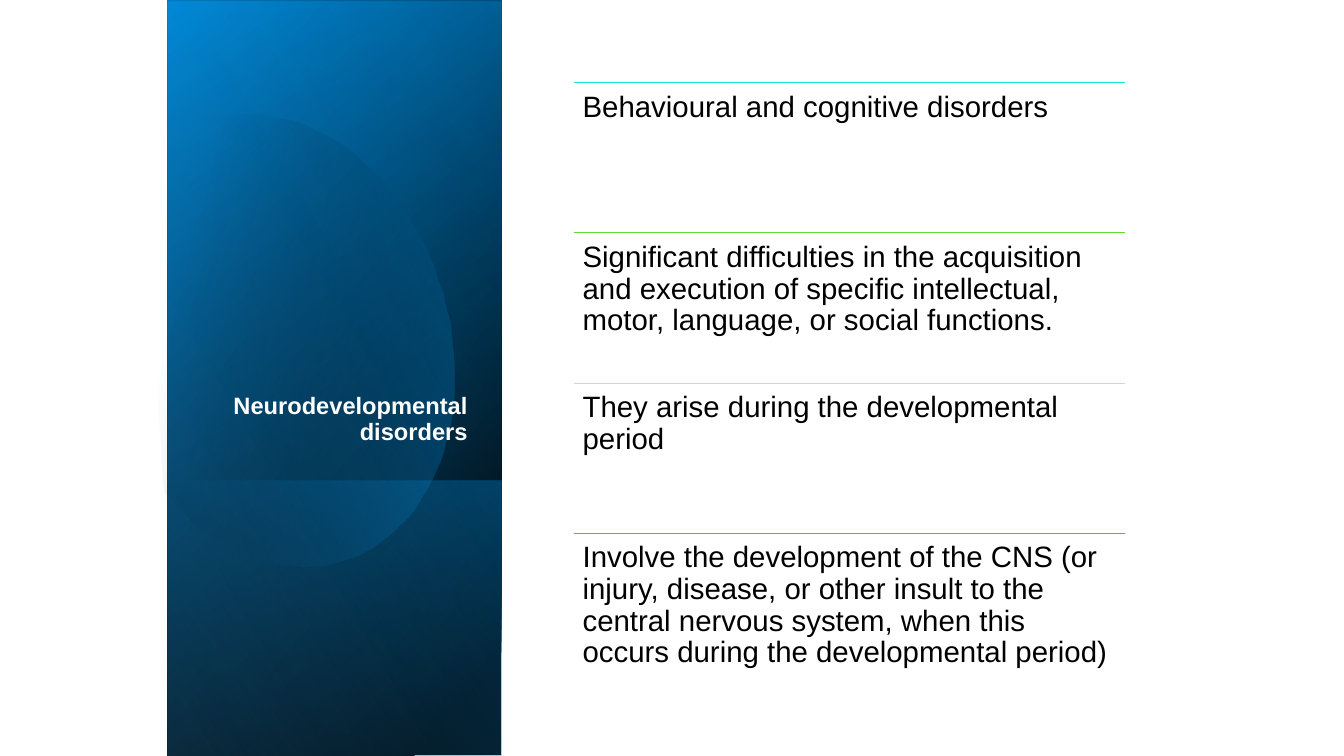
from math import cos, radians, sin

from lxml.etree import SubElement
from pptx import Presentation
from pptx.dml.color import RGBColor
from pptx.enum.shapes import MSO_CONNECTOR, MSO_SHAPE
from pptx.enum.text import MSO_ANCHOR, MSO_AUTO_SIZE, PP_ALIGN
from pptx.oxml.ns import qn
from pptx.util import Pt

BLACK = RGBColor(0x00, 0x00, 0x00)
WHITE = RGBColor(0xFF, 0xFF, 0xFF)
DEEP_BLUE = RGBColor(0x00, 0x79, 0xBF)
BLUE = RGBColor(0x00, 0xA2, 0xFF)
PALE_BLUE = RGBColor(0x66, 0xC7, 0xFF)
TEAL = RGBColor(0x16, 0xE7, 0xCF)
GREEN = RGBColor(0x61, 0xD8, 0x36)
YELLOW = RGBColor(0xFA, 0xE2, 0x32)
CORAL = RGBColor(0xFF, 0x64, 0x4E)

# Side panel: centre x, centre y, length and breadth before turning, angle, stops.
# A stop is position in percent, colour, opacity in percent.
PANEL_LAYERS = [
    (239, 269.6, 540, 238.3, 50, [(8, BLACK, 100), (100, DEEP_BLUE, 100)]),
    (239, 271, 540, 238.3, 30, [(0, BLACK, 0), (99, BLUE, 46)]),
    (239, 441.7, 197.3, 238.3, 130, [(2, BLUE, 29), (100, BLACK, 30)]),
]
PANEL_SHEEN = (239, 269.6, 540, 238.3, 120, [(0, BLACK, 0), (99, PALE_BLUE, 11)])

# Oval outline in points: start, then curves (three points) and lines (one point)
OVAL_START = (189.4, 82.1)
OVAL_SEGMENTS = [
    [(243.4, 87.8), (295.9, 138.2), (316.1, 208.8)],
    [(341.3, 296.6), (308.9, 382.3), (243.4, 401)],
    [(202.3, 413.3), (158.4, 396), (124.6, 360)],
    [(117.4, 351.4)],
    [(101.5, 119.5)],
    [(109.4, 110.9)],
    [(121.7, 98.6), (135.4, 90), (151.9, 85)],
    [(164.2, 81.4), (177.1, 80.6), OVAL_START],
]
OVAL_CENTRE = (205.9, 240.8)
OVAL_TURN = 343.9

STATEMENTS = [
    (TEAL, "Behavioural and cognitive disorders"),
    (GREEN, "Significant difficulties in the acquisition and execution of specific "
            "intellectual, motor, language, or social functions."),
    (YELLOW, "They arise during the developmental period"),
    (CORAL, "Involve the development of the CNS (or injury, disease, or other insult "
            "to the central nervous system, when this occurs during the "
            "developmental period)"),
]
LIST_LEFT, LIST_TOP, LIST_WIDTH, ROW_HEIGHT = 409.7, 59, 393.8, 107.3


def write_text(frame, text, size, color, bold=False, align=PP_ALIGN.LEFT,
               anchor=MSO_ANCHOR.TOP, inset=(6.5, 6.5), space_after=0):
    frame.word_wrap = True
    frame.auto_size = MSO_AUTO_SIZE.NONE
    frame.vertical_anchor = anchor
    frame.margin_left = frame.margin_right = Pt(inset[0])
    frame.margin_top = frame.margin_bottom = Pt(inset[1])
    paragraph = frame.paragraphs[0]
    paragraph.alignment = align
    paragraph.line_spacing = 0.9
    paragraph.space_before = Pt(0)
    paragraph.space_after = Pt(space_after)
    run = paragraph.add_run()
    run.text = text
    run.font.name = "Arial"
    run.font.size = Pt(size)
    run.font.bold = bold
    run.font.color.rgb = color


def trace_outline(start, segments, steps=24):
    """Turn lines and cubic curves into a list of points."""
    points = [start]
    for segment in segments:
        if len(segment) == 1:
            points += segment
            continue
        a, (b, c, d) = points[-1], segment
        for step in range(1, steps + 1):
            t = step / steps
            u = 1 - t
            points.append(tuple(
                u**3 * a[i] + 3 * u * u * t * b[i] + 3 * u * t * t * c[i] + t**3 * d[i]
                for i in (0, 1)))
    return points


def turn(point, centre, degrees):
    angle = radians(degrees)
    dx, dy = point[0] - centre[0], point[1] - centre[1]
    return (centre[0] + dx * cos(angle) - dy * sin(angle),
            centre[1] + dx * sin(angle) + dy * cos(angle))


class SlideBuilder:
    def __init__(self, slide):
        self.slide = slide
        self.shapes = slide.shapes

    def shade(self, shape, angle, stops):
        shape.shadow.inherit = False
        shape.line.fill.background()
        shape.fill.gradient()
        shape.fill.gradient_angle = 360 - angle
        for stop, (position, color, _) in zip(shape.fill.gradient_stops, stops):
            stop.position = position / 100
            stop.color.rgb = color
        stop_colors = list(shape.element.spPr.iter(qn("a:srgbClr")))
        for stop_color, (_, _, opacity) in zip(stop_colors, stops):
            if opacity < 100:
                SubElement(stop_color, qn("a:alpha")).set("val", str(opacity * 1000))

    def panel(self, centre_x, centre_y, length, breadth, angle, stops):
        layer = self.shapes.add_shape(
            MSO_SHAPE.RECTANGLE, Pt(centre_x - length / 2), Pt(centre_y - breadth / 2),
            Pt(length), Pt(breadth))
        layer.rotation = 90
        layer.element.spPr.get_or_add_xfrm().set("flipH", "1")
        self.shade(layer, angle, stops)

    def oval(self, points, centre, rotation, angle, stops):
        upright = [turn(point, centre, -rotation) for point in points]
        builder = self.shapes.build_freeform(*upright[0], scale=Pt(1))
        builder.add_line_segments(upright[1:], close=True)
        glow = builder.convert_to_shape()
        glow.rotation = rotation
        self.shade(glow, angle, stops)

    def title(self, text, left, top, width, height, **style):
        heading = self.shapes.title
        heading.left, heading.top = Pt(left), Pt(top)
        heading.width, heading.height = Pt(width), Pt(height)
        write_text(heading.text_frame, text, **style)
        # Bring the heading in front of the panel
        self.shapes.element.append(heading.element)

    def rule(self, left, top, width, color):
        divider = self.shapes.add_connector(
            MSO_CONNECTOR.STRAIGHT, Pt(left), Pt(top), Pt(left + width), Pt(top))
        divider.line.color.rgb = color
        divider.line.width = Pt(0.75)
        SubElement(divider.element.spPr, qn("a:effectLst"))

    def text(self, text, left, top, width, height, **style):
        box = self.shapes.add_textbox(Pt(left), Pt(top), Pt(width), Pt(height))
        write_text(box.text_frame, text, **style)


def main():
    presentation = Presentation()
    presentation.slide_width, presentation.slide_height = Pt(960), Pt(540)
    page = SlideBuilder(presentation.slides.add_slide(presentation.slide_layouts[5]))

    # Side panel
    for layer in PANEL_LAYERS:
        page.panel(*layer)
    page.oval(trace_outline(OVAL_START, OVAL_SEGMENTS), OVAL_CENTRE, OVAL_TURN,
              30, [(29, BLACK, 0), (100, BLUE, 43)])
    page.panel(*PANEL_SHEEN)

    # Title
    page.title("Neurodevelopmental disorders", 154.8, 132.5, 184.3, 188.6,
               size=16.9, color=WHITE, bold=True, align=PP_ALIGN.RIGHT,
               anchor=MSO_ANCHOR.BOTTOM, inset=(5, 2.9))

    # Statements under coloured rules
    for row, (color, statement) in enumerate(STATEMENTS):
        top = LIST_TOP + row * ROW_HEIGHT
        page.rule(LIST_LEFT, top, LIST_WIDTH, color)
        page.text(statement, LIST_LEFT, top, LIST_WIDTH, ROW_HEIGHT,
                  size=21, color=BLACK, space_after=7)

    presentation.save("out.pptx")


if __name__ == "__main__":
    main()
